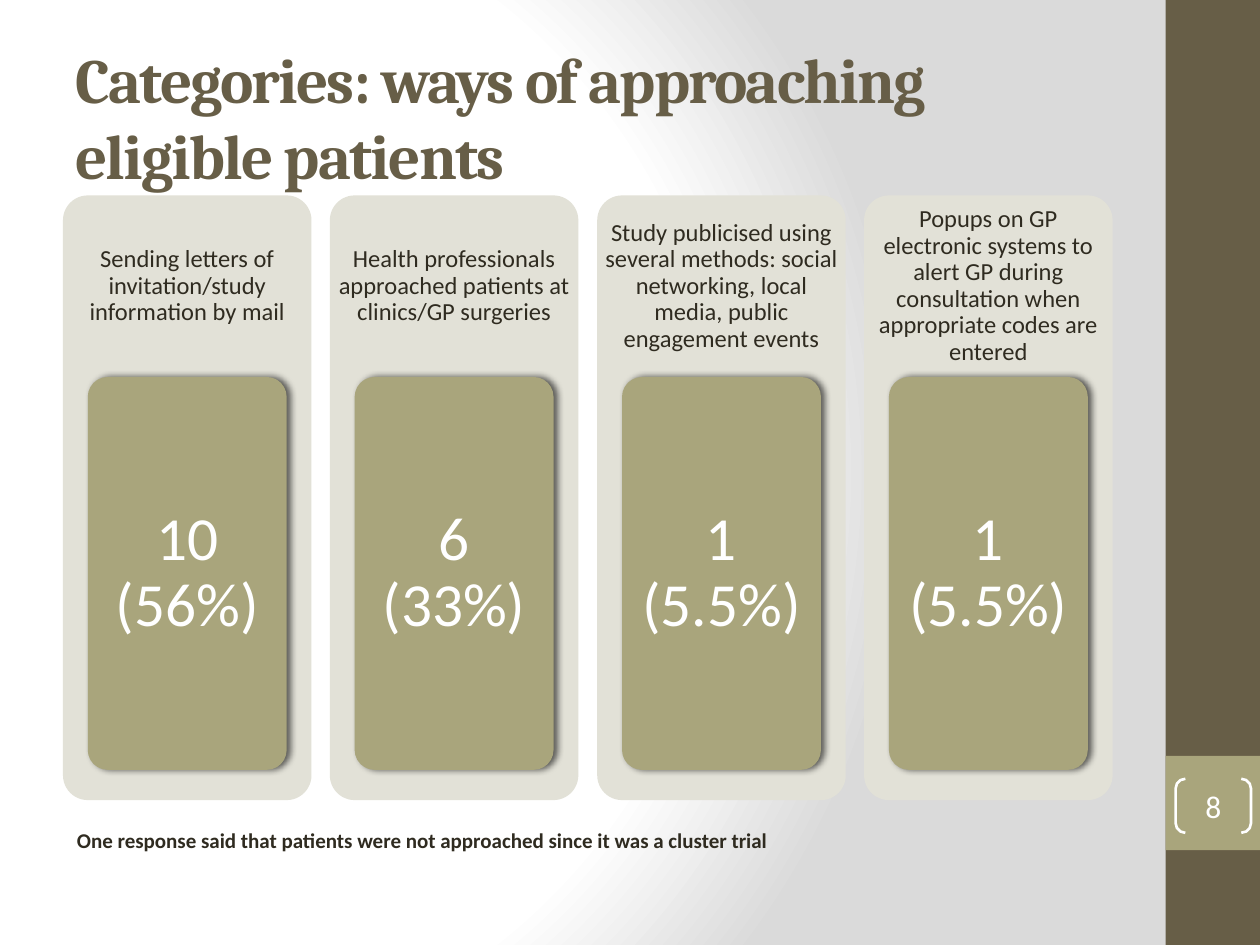
from pptx import Presentation
from pptx.dml.color import RGBColor
from pptx.enum import shapes, text
from pptx.oxml import parse_xml
from pptx.oxml.ns import nsdecls
from pptx.util import Cm, Pt

# Content
TITLE = "Categories: ways of approaching eligible patients"
CATEGORIES = [
    ("Sending letters of invitation/study information by mail", "10 (56%)"),
    ("Health professionals approached patients at clinics/GP surgeries", "6 (33%)"),
    ("Study publicised using several methods: social networking, local media, "
     "public engagement events", "1 (5.5%)"),
    ("Popups on GP electronic systems to alert GP during consultation when "
     "appropriate codes are entered", "1 (5.5%)"),
]
FOOTNOTE = ("One response said that patients were not approached "
            "since it was a cluster trial")
PAGE = "8"

BROWN = RGBColor(0x67, 0x5E, 0x47)
OLIVE = RGBColor(0xA9, 0xA5, 0x7C)
PALE = RGBColor(0xE2, 0xE1, 0xD7)
INK = RGBColor(0x2F, 0x2B, 0x20)
WHITE = RGBColor(0xFF, 0xFF, 0xFF)

BACKGROUND = f"""<p:bg {nsdecls('p', 'a')}><p:bgPr><a:gradFill rotWithShape="1"><a:gsLst>
<a:gs pos="0"><a:srgbClr val="FFFFFF"/></a:gs>
<a:gs pos="75000"><a:srgbClr val="FFFFFF"/></a:gs>
<a:gs pos="100000"><a:srgbClr val="DADADA"/></a:gs></a:gsLst>
<a:path path="circle"><a:fillToRect l="20000" t="50000" r="100000" b="50000"/></a:path>
</a:gradFill><a:effectLst/></p:bgPr></p:bg>"""
CARD_SHADOW = f"""<a:effectLst {nsdecls('a')}>
<a:outerShdw blurRad="{Pt(4)}" dist="{Pt(2)}" dir="0" algn="ctr" rotWithShape="0">
<a:srgbClr val="000000"><a:alpha val="60000"/></a:srgbClr></a:outerShdw></a:effectLst>"""

# Layout in centimetres
LEFT, ROW_WIDTH = 1.27, 21.16
PANEL_TOP, PANEL_W, PANEL_H = 3.94, 5.01, 12.19
PITCH = (ROW_WIDTH - PANEL_W) / (len(CATEGORIES) - 1)
HEADING_H, CARD_H = 0.3 * PANEL_H, 0.65 * PANEL_H
CARD_TOP, CARD_W = PANEL_TOP + HEADING_H, 0.8 * PANEL_W
CARD_PAD = 0.12
BAR_LEFT, BAR_W = 23.5, 1.9


def box(at):
    return [Cm(round(length, 2)) for length in at]


def add_block(slide, kind, at, fill=None, corner=None):
    block = slide.shapes.add_shape(kind, *box(at))
    block.shadow.inherit = False
    block.line.fill.background()
    if fill is None:
        block.fill.background()
    else:
        block.fill.solid()
        block.fill.fore_color.rgb = fill
    if corner is not None:
        block.adjustments[0] = corner
    return block


def write(holder, words, size, color, font="Calibri", bold=False, centred=False,
          anchor=text.MSO_ANCHOR.MIDDLE, insets=(0.25, 0.13)):
    frame = holder.text_frame
    frame.word_wrap = True
    frame.vertical_anchor = anchor
    frame.margin_left = frame.margin_right = Cm(insets[0])
    frame.margin_top = frame.margin_bottom = Cm(insets[1])
    paragraph = frame.paragraphs[0]
    paragraph.text = words
    paragraph.alignment = text.PP_ALIGN.CENTER if centred else text.PP_ALIGN.LEFT
    paragraph.font.name, paragraph.font.size = font, Pt(size)
    paragraph.font.bold, paragraph.font.color.rgb = bold, color
    return paragraph


def add_text(slide, at, *args, **style):
    return write(slide.shapes.add_textbox(*box(at)), *args, **style)


def add_category(slide, left, heading, count):
    rounded = shapes.MSO_SHAPE.ROUNDED_RECTANGLE
    add_block(slide, rounded, (left, PANEL_TOP, PANEL_W, PANEL_H), PALE, 0.1)
    label = add_text(slide, (left, PANEL_TOP, PANEL_W, HEADING_H), heading, 14, INK,
                     centred=True, insets=(0.15, 0.15))
    card_left = left + (PANEL_W - CARD_W) / 2
    card = add_block(slide, rounded, (card_left, CARD_TOP, CARD_W, CARD_H), OLIVE, 0.1)
    properties = card.element.spPr
    properties.replace(properties.find("{*}effectLst"), parse_xml(CARD_SHADOW))
    figure = add_text(slide, (card_left + CARD_PAD, CARD_TOP + CARD_PAD,
                              CARD_W - 2 * CARD_PAD, CARD_H - 2 * CARD_PAD),
                      count, 35, WHITE, centred=True, insets=(0.25, 0.18))
    for paragraph, space in ((label, 5), (figure, 12)):
        paragraph.line_spacing = 0.9
        paragraph.space_after = Pt(space)


def main():
    deck = Presentation()
    deck.slide_width, deck.slide_height = Cm(25.4), Cm(19.05)
    slide = deck.slides.add_slide(deck.slide_layouts[6])
    slide.element.cSld.insert(0, parse_xml(BACKGROUND))

    # Side bar
    rectangle = shapes.MSO_SHAPE.RECTANGLE
    add_block(slide, rectangle, (BAR_LEFT, 0, BAR_W, 19.05), BROWN)
    add_block(slide, rectangle, (BAR_LEFT, 15.24, BAR_W, BAR_W), OLIVE)

    # Title
    title = add_text(slide, (LEFT, 0.76, ROW_WIDTH, 3.18), TITLE, 36, BROWN,
                     font="Cambria", bold=True)
    title.runs[0].font._element.set("spc", "-100")

    # Category columns
    for index, (heading, count) in enumerate(CATEGORIES):
        add_category(slide, LEFT + index * PITCH, heading, count)

    # Page number
    bracket = add_block(slide, shapes.MSO_SHAPE.DOUBLE_BRACKET,
                        (23.7, 15.7, 1.52, 1.09), corner=0.18)
    bracket.line.color.rgb = WHITE
    bracket.line.width = Pt(1.5)
    write(bracket, PAGE, 18, WHITE, centred=True, insets=(0, 0))

    # Footnote
    add_text(slide, (1.3, 16.56, 21.21, 0.77), FOOTNOTE, 12, INK, bold=True,
             anchor=text.MSO_ANCHOR.TOP)

    deck.save("out.pptx")


if __name__ == "__main__":
    main()
